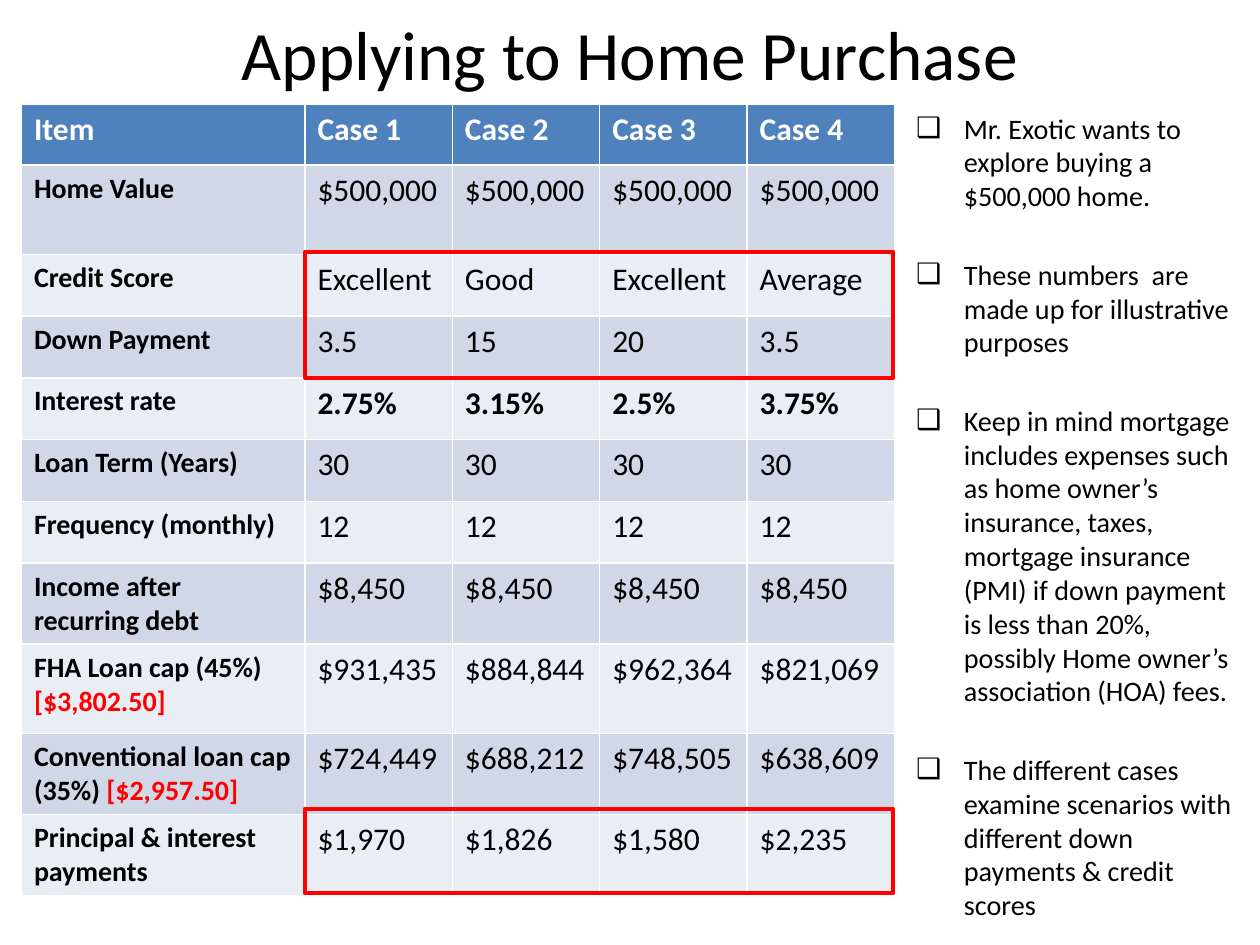
import pptx
import pptx.util
import pptx.dml.color
import pptx.enum.shapes
import pptx.enum.text
import pptx.oxml.ns
import lxml.etree

Inches = pptx.util.Inches
Pt = pptx.util.Pt
RGBColor = pptx.dml.color.RGBColor

BLACK = RGBColor(0x00, 0x00, 0x00)
WHITE = RGBColor(0xFF, 0xFF, 0xFF)
RED = RGBColor(0xFF, 0x00, 0x00)
HEADER_BLUE = RGBColor(0x4F, 0x81, 0xBD)
BAND_DARK = RGBColor(0xD0, 0xD8, 0xE8)
BAND_LIGHT = RGBColor(0xE9, 0xED, 0xF4)


def add_run(p, text, size, color=BLACK, bold=False):
    r = p.add_run()
    r.text = text
    r.font.name = "Calibri"
    r.font.size = Pt(size)
    r.font.bold = bold
    r.font.color.rgb = color


def place(sp, left, top, width, height):
    sp.left, sp.top = Inches(left), Inches(top)
    sp.width, sp.height = Inches(width), Inches(height)


prs = pptx.Presentation()
prs.slide_width = Inches(10)
prs.slide_height = Inches(7.5)
s = prs.slides.add_slide(prs.slide_layouts[1])

title = s.shapes.title
place(title, 0.5, 0.01, 9, 0.82)
title.text_frame.auto_size = pptx.enum.text.MSO_AUTO_SIZE.NONE
p = title.text_frame.paragraphs[0]
p.alignment = pptx.enum.text.PP_ALIGN.CENTER
add_run(p, "Applying to Home Purchase", 39.6)

notes = [
    "Mr. Exotic wants to explore buying a $500,000 home.",
    "These numbers  are made up for illustrative purposes",
    "Keep in mind mortgage includes expenses such as home owner’s insurance, taxes, "
    "mortgage insurance (PMI) if down payment is less than 20%, possibly Home owner’s "
    "association (HOA) fees.",
    "The different cases examine scenarios with different down payments & credit scores",
]
body = s.placeholders[1]
place(body, 7.17, 0.83, 2.75, 6.25)
tf = body.text_frame
tf.word_wrap = True
tf.auto_size = pptx.enum.text.MSO_AUTO_SIZE.NONE
for i, note in enumerate(notes):
    p = tf.add_paragraph() if i else tf.paragraphs[0]
    p.space_before = Pt(25.5 if i else 3.2)
    add_run(p, note, 16.1)
    pPr = p._p.get_or_add_pPr()
    pPr.set("marL", str(Inches(0.38)))
    pPr.set("indent", str(Inches(-0.38)))
    bullet = lxml.etree.SubElement(pPr, pptx.oxml.ns.qn("a:buChar"))
    bullet.set("char", "❑")

rows = [
    ("Item", "Case 1", "Case 2", "Case 3", "Case 4"),
    ("Home Value",) + ("$500,000",) * 4,
    ("Credit Score", "Excellent", "Good", "Excellent", "Average"),
    ("Down Payment", "3.5", "15", "20", "3.5"),
    ("Interest rate", "2.75%", "3.15%", "2.5%", "3.75%"),
    ("Loan Term (Years)",) + ("30",) * 4,
    ("Frequency (monthly)",) + ("12",) * 4,
    ("Income after recurring debt",) + ("$8,450",) * 4,
    ("FHA Loan cap (45%)", "$931,435", "$884,844", "$962,364", "$821,069"),
    ("Conventional loan cap (35%) ", "$724,449", "$688,212", "$748,505", "$638,609"),
    ("Principal & interest payments", "$1,970", "$1,826", "$1,580", "$2,235"),
]
row_heights = [0.48, 0.71] + [0.49] * 5 + [0.64, 0.71, 0.64, 0.64]
col_widths = [2.25] + [1.17] * 4
caps = {"FHA Loan cap (45%)": "[$3,802.50]", "Conventional loan cap (35%) ": "[$2,957.50]"}

table = s.shapes.add_table(
    len(rows), len(col_widths), Inches(0.17), Inches(0.83),
    Inches(sum(col_widths)), Inches(sum(row_heights))).table
for col, width in zip(table.columns, col_widths):
    col.width = Inches(width)
for i, (row, height) in enumerate(zip(rows, row_heights)):
    table.rows[i].height = Inches(height)
    header = i == 0
    for j, text in enumerate(row):
        cell = table.cell(i, j)
        cell.fill.solid()
        cell.fill.fore_color.rgb = HEADER_BLUE if header else BAND_DARK if i % 2 else BAND_LIGHT
        p = cell.text_frame.paragraphs[0]
        bold = header or j == 0 or row[0] == "Interest rate"
        size = 16 if j == 0 and not header else 18
        add_run(p, text, size, WHITE if header else BLACK, bold)
        if text in caps:
            if not text.endswith(" "):
                p.add_line_break()
            add_run(p, caps[text], size, RED, True)

for top, height in ((2, 1), (6.42, 0.67)):
    sp = s.shapes.add_shape(pptx.enum.shapes.MSO_SHAPE.RECTANGLE,
                            Inches(2.42), Inches(top), Inches(4.67), Inches(height))
    sp.shadow.inherit = False
    sp.fill.background()
    sp.line.color.rgb = RED
    sp.line.width = Pt(2.25)

prs.save("out.pptx")
